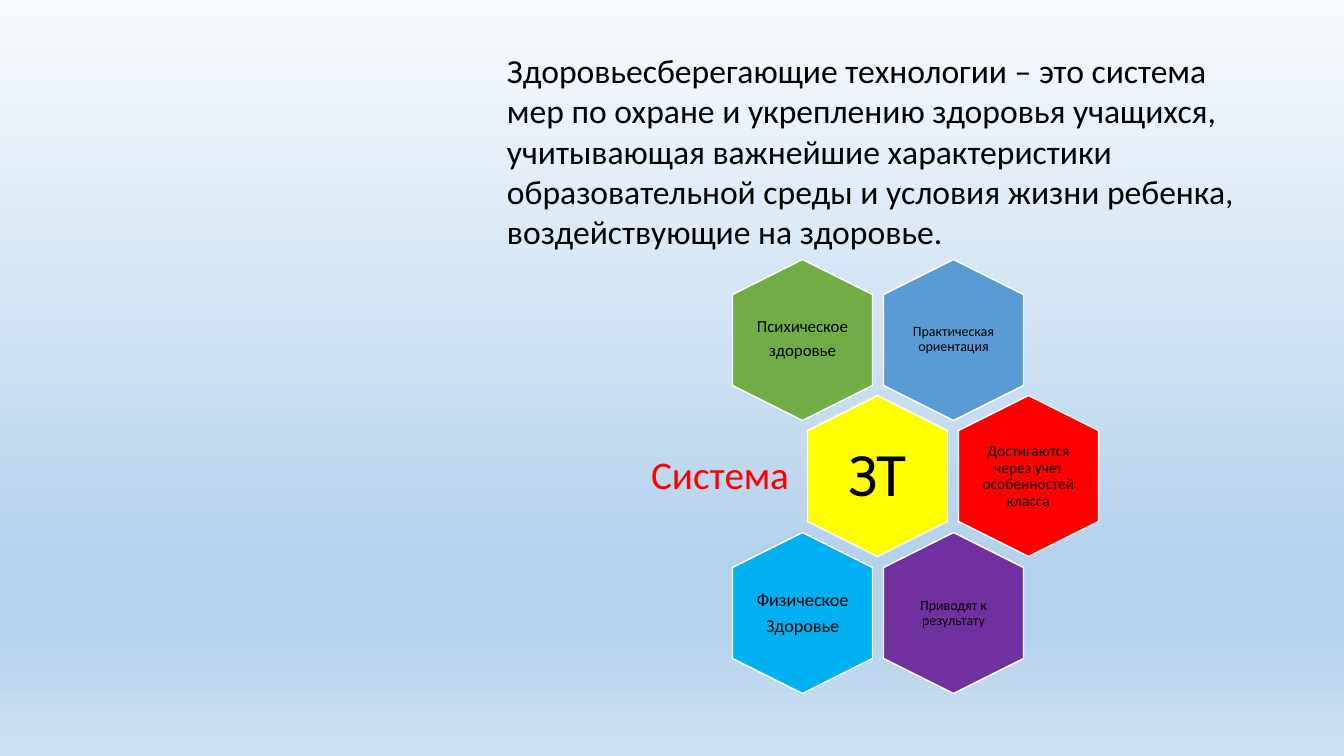
from lxml.etree import SubElement
from pptx import Presentation
from pptx.dml.color import RGBColor as Rgb
from pptx.enum.shapes import MSO_SHAPE as Preset
from pptx.enum.text import MSO_ANCHOR as Anchor, MSO_AUTO_SIZE as AutoSize, PP_ALIGN as Align
from pptx.oxml.ns import qn
from pptx.util import Emu, Pt

EMU_PER_PX = 914400 / 100.8
COLORS = {
    "black": "000000", "white": "FFFFFF", "red": "FF0000", "blue": "5B9BD5",
    "green": "70AD47", "yellow": "FFFF00", "purple": "7030A0", "cyan": "00B0F0",
    "sky_top": "F7FAFD", "sky_mid": "B5D2EC", "sky_low": "CEE1F2",
}
SKY = [(0, "sky_top"), (74, "sky_mid"), (83, "sky_mid"), (100, "sky_low")]
FIRST_X, FIRST_Y = 802, 340
HALF_STEP, ROW_STEP = 75.6, 136.5
HEX_LENGTH, HEX_BREADTH = 161, 140
LABEL_W, LABEL_H = 97, 111
CELLS = [
    (2, 0, "blue", "Практическая ориентация", 10, 4),
    (0, 0, "green", "Психическое\nздоровье", 12, 0),
    (1, 1, "yellow", "ЗТ", 44, 18),
    (3, 1, "red", "Достигаются через учет особенностей класса", 11, 0),
    (2, 2, "purple", "Приводят к результату", 10, 4),
    (0, 2, "cyan", "Физическое\nЗдоровье", 13, 0),
]


def px(length):
    """Turn pixels into EMU."""
    return Emu(round(length * EMU_PER_PX))


def color(name):
    """Return the named colour."""
    return Rgb.from_string(COLORS[name])


def box_around(x, y, width, height):
    """Return the pixel box centred on a point."""
    return round(x - width / 2), round(y - height / 2), width, height


def paint_sky(slide):
    """Fill the background with the vertical sky gradient."""
    fill = slide.background.fill
    fill.gradient()
    fill.gradient_angle = 270
    stops = slide.element.find(".//" + qn("a:gsLst"))
    for stop in list(stops):
        stops.remove(stop)
    for percent, name in SKY:
        stop = SubElement(stops, qn("a:gs"), pos=str(percent * 1000))
        SubElement(stop, qn("a:srgbClr"), val=COLORS[name])


def add_text(slide, text, box, size, ink="black", align=Align.CENTER,
             anchor=Anchor.MIDDLE, insets=(0, 0), spacing=0.9, after=0.35):
    """Add a wrapped text box with one paragraph per line of text."""
    frame = slide.shapes.add_textbox(*map(px, box)).text_frame
    frame.word_wrap = True
    frame.auto_size = AutoSize.NONE
    frame.vertical_anchor = anchor
    frame.margin_left = frame.margin_right = px(insets[0])
    frame.margin_top = frame.margin_bottom = px(insets[1])
    frame.text = text
    for paragraph in frame.paragraphs:
        paragraph.alignment = align
        paragraph.line_spacing = spacing
        paragraph.space_after = Pt(size * after)
        for run in paragraph.runs:
            run.font.name = "Calibri"
            run.font.size = Pt(size)
            run.font.color.rgb = color(ink)
    return frame


def add_cell(slide, column, row, fill, label, size, inset):
    """Add one upright hexagon of the honeycomb with its label."""
    center = FIRST_X + column * HALF_STEP, FIRST_Y + row * ROW_STEP
    box = box_around(*center, HEX_LENGTH, HEX_BREADTH)
    cell = slide.shapes.add_shape(Preset.HEXAGON, *map(px, box))
    cell.rotation = 90
    cell.adjustments[0] = 0.25
    cell.shadow.inherit = False
    cell.fill.solid()
    cell.fill.fore_color.rgb = color(fill)
    cell.line.color.rgb = color("white")
    cell.line.width = Pt(1)
    add_text(slide, label, box_around(*center, LABEL_W, LABEL_H), size,
             insets=(inset, inset))


def main():
    """Build the slide and save it."""
    deck = Presentation()
    deck.slide_width, deck.slide_height = px(1344), px(756)
    slide = deck.slides.add_slide(deck.slide_layouts[6])
    paint_sky(slide)
    definition = add_text(
        slide,
        "Здоровьесберегающие технологии – это система мер по охране и укреплению "
        "здоровья учащихся, учитывающая важнейшие характеристики образовательной "
        "среды и условия жизни ребенка, воздействующие на здоровье.",
        (497, 45, 776, 214), 24, align=Align.LEFT, anchor=Anchor.TOP,
        insets=(10, 5), spacing=1, after=0)
    definition.auto_size = AutoSize.SHAPE_TO_FIT_TEXT
    for cell in CELLS:
        add_cell(slide, *cell)
    add_text(slide, "Система", (628, 428, 173, 97), 28, ink="red",
             align=Align.RIGHT, insets=(12, 12))
    deck.save("out.pptx")


if __name__ == "__main__":
    main()
